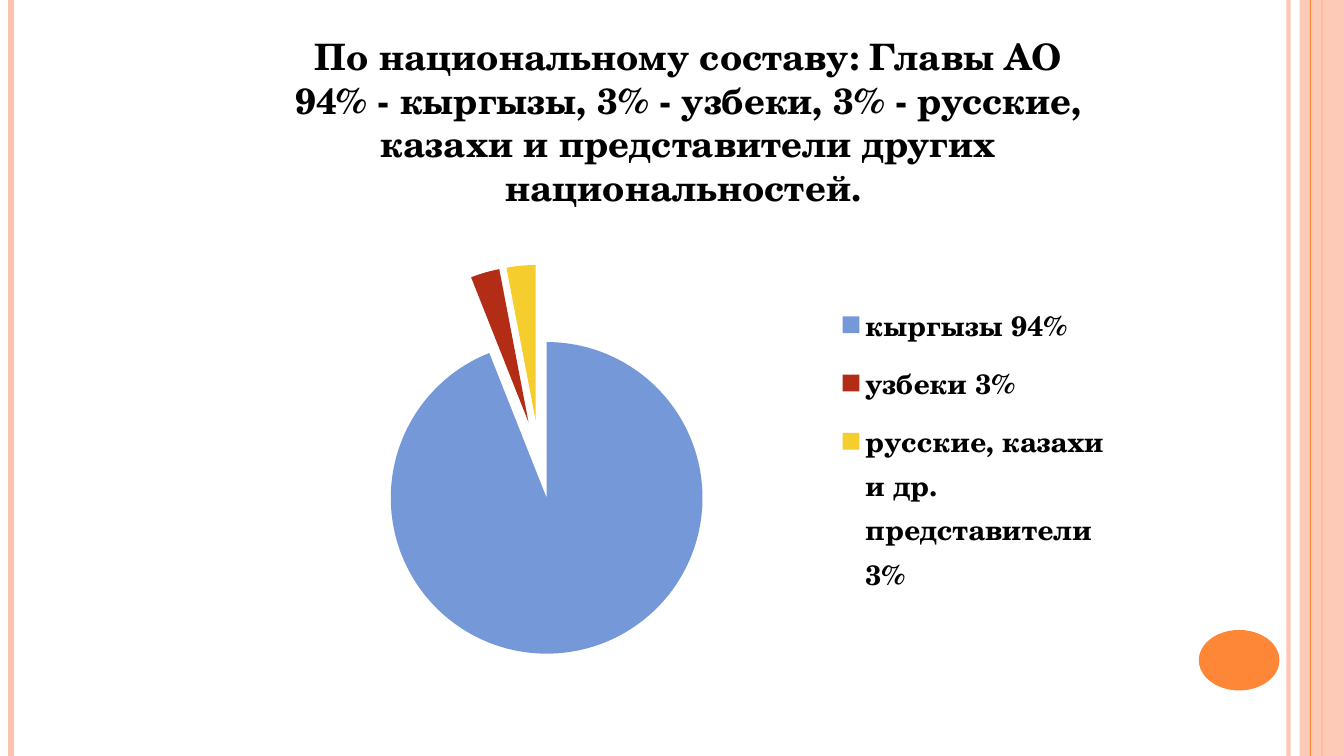
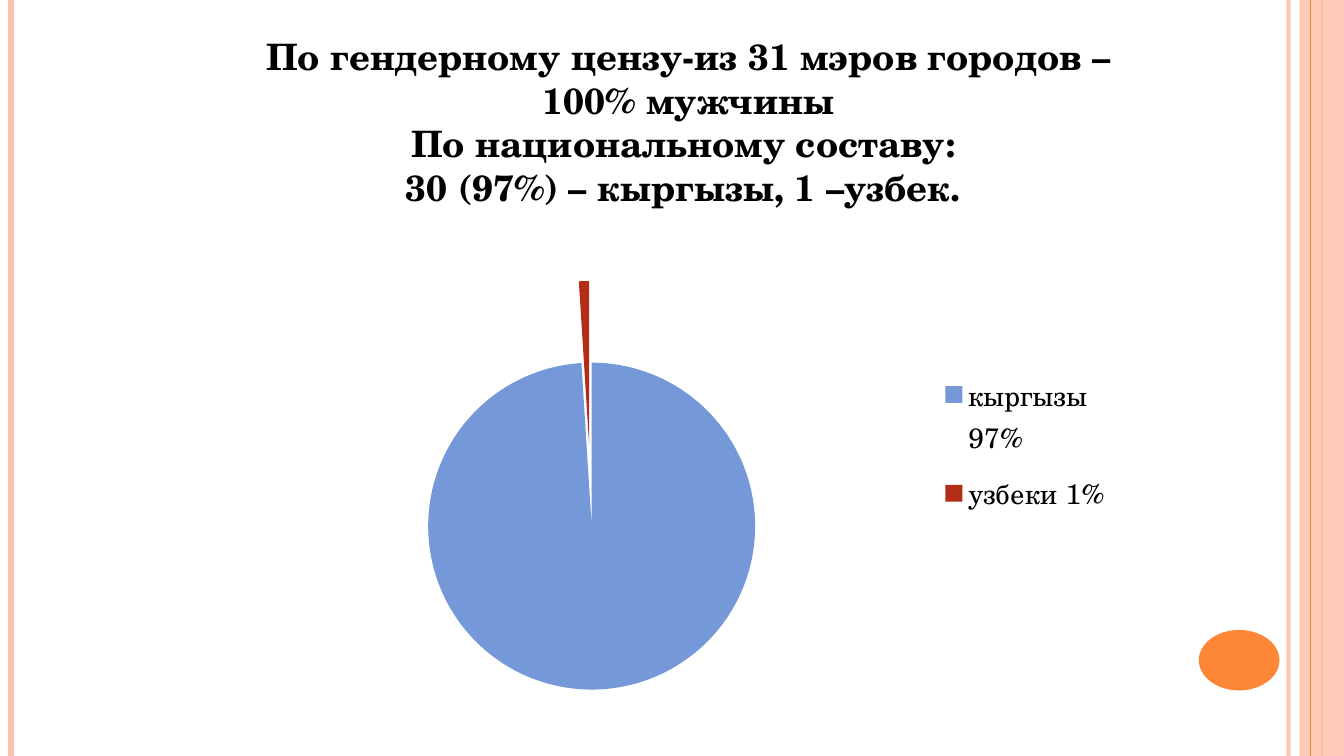
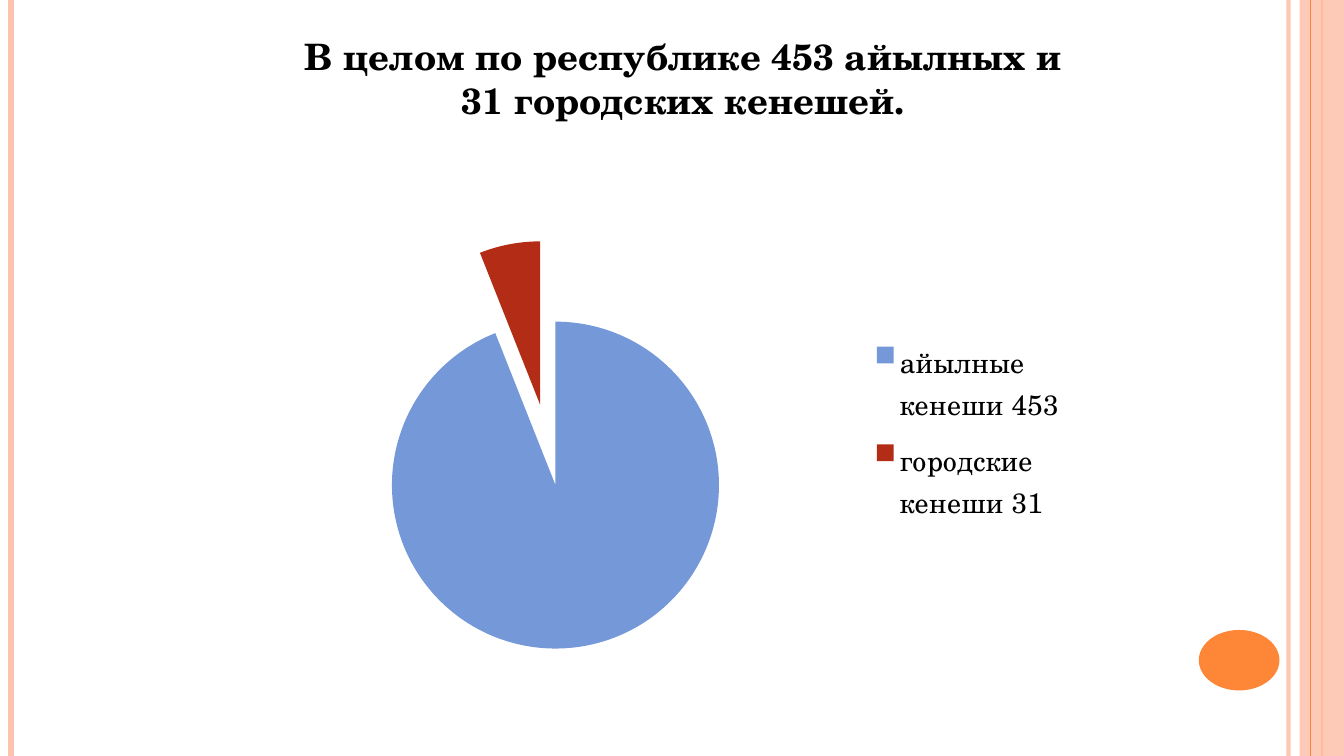
from lxml import etree
from pptx import Presentation
from pptx.chart.data import CategoryChartData
from pptx.dml.color import RGBColor
from pptx.enum import chart as charts, shapes, text
from pptx.oxml import ns
from pptx.util import Inches, Pt

FONT = "TeX Gyre Schola"
BLACK = RGBColor(0x00, 0x00, 0x00)
WHITE = RGBColor(0xFF, 0xFF, 0xFF)
PEACH = RGBColor(0xFE, 0xC3, 0xAE)
ORANGE = RGBColor(0xFE, 0x86, 0x37)
SLICE_COLORS = [
    ORANGE,
    RGBColor(0x75, 0x98, 0xD9),
    RGBColor(0xB3, 0x2C, 0x16),
    RGBColor(0xF5, 0xCD, 0x2D),
]

# Frame parts: x, colour, width in points, opacity in percent
LINES_BELOW_BAND = [(12.78, PEACH, 3, 93), (0.11, PEACH, 4.5, 100), (13.11, ORANGE, 1.5, 100)]
LINES_ABOVE_BAND = [(13, ORANGE, 0.75, 100)]

# Chart boxes are left, top, width, height in inches;
# legend boxes are the same as fractions of the chart
SLIDES = [
    {
        "lines": [
            "По национальному составу: Главы АО",
            "94% - кыргызы, 3% - узбеки, 3% - русские, казахи и представители других национальностей. ",
        ],
        "text_height": 6.22,
        "chart_box": (2.49, 2.49, 8.58, 4.14),
        "legend_box": (0.67, 0.09, 0.33, 0.77),
        "legend_bold": True,
        "values": {"кыргызы 94%": 94, "узбеки 3%": 3, "русские, казахи и др. представители 3%": 3},
    },
    {
        "lines": [
            "По гендерному цензу-из 31 мэров городов – 100% мужчины",
            "По национальному составу: ",
            "30 (97%) – кыргызы, 1 –узбек. ",
        ],
        "text_height": 6.54,
        "chart_box": (2.49, 2.65, 8.58, 4.33),
        "legend_box": (0.79, 0.21, 0.21, 0.39),
        "legend_bold": False,
        "values": {"кыргызы 97%": 99, "узбеки 1%": 1},
    },
    {
        "lines": ["В целом по республике 453 айылных и ", "31 городских кенешей. "],
        "text_height": 6.54,
        "chart_box": (2.18, 2.25, 8.58, 4.33),
        "legend_box": (0.75, 0.23, 0.23, 0.48),
        "legend_bold": False,
        "values": {"айылные кенеши 453": 94, "городские кенеши 31": 6},
    },
]


def add_text(slide, lines, box, size=26, bold=True, color=BLACK, align=text.PP_ALIGN.CENTER):
    frame = slide.shapes.add_textbox(*map(Inches, box)).text_frame
    frame.word_wrap = True
    for index, line in enumerate(lines):
        paragraph = frame.add_paragraph() if index else frame.paragraphs[0]
        paragraph.alignment = align
        run = paragraph.add_run()
        run.text = line
        run.font.name = FONT
        run.font.size = Pt(size)
        run.font.bold = bold
        run.font.color.rgb = color


def set_opacity(shape, percent):
    color = next(shape._element.spPr.iter(ns.qn("a:srgbClr")))
    etree.SubElement(color, ns.qn("a:alpha"), val=str(percent * 1000))


presentation = Presentation()
presentation.slide_width = Inches(13.33)
presentation.slide_height = Inches(7.5)

for content in SLIDES:
    slide = presentation.slides.add_slide(presentation.slide_layouts[6])
    slide.background.fill.solid()
    slide.background.fill.fore_color.rgb = WHITE

    # Side lines, with the band between them
    for x, color, width, opacity in LINES_BELOW_BAND + LINES_ABOVE_BAND:
        if (x, color, width, opacity) in LINES_ABOVE_BAND:
            band = slide.shapes.add_shape(
                shapes.MSO_SHAPE.RECTANGLE, Inches(12.89), 0, Inches(0.44), Inches(7.5))
            band.shadow.inherit = False
            band.fill.solid()
            band.fill.fore_color.rgb = PEACH
            band.line.fill.background()
            set_opacity(band, 87)
        line = slide.shapes.add_connector(
            shapes.MSO_CONNECTOR.STRAIGHT, Inches(x), 0, Inches(x), Inches(7.5))
        line.line.color.rgb = color
        line.line.width = Pt(width)
        if opacity < 100:
            set_opacity(line, opacity)
        etree.SubElement(line._element.spPr, ns.qn("a:effectLst"))

    # Number disc
    disc = slide.shapes.add_shape(
        shapes.MSO_SHAPE.OVAL, Inches(11.89), Inches(6.25), Inches(0.8), Inches(0.6))
    disc.shadow.inherit = False
    disc.fill.solid()
    disc.fill.fore_color.rgb = ORANGE
    disc.line.fill.background()

    add_text(slide, content["lines"], (2.34, 0.29, 8.98, content["text_height"]))

    # Pie chart, with an empty first category
    data = CategoryChartData()
    data.categories = ["", *content["values"]]
    data.add_series("Series 1", [None, *content["values"].values()])
    chart = slide.shapes.add_chart(
        charts.XL_CHART_TYPE.PIE, *map(Inches, content["chart_box"]), data).chart
    chart.has_title = False
    chart.font.name = FONT
    chart.font.size = Pt(10)
    chart.font.color.rgb = BLACK
    plot = chart.plots[0]
    plot.vary_by_categories = True
    series = plot.series[0]
    for index in range(len(content["values"]) + 1):
        point_format = series.points[index].format
        point_format.fill.solid()
        point_format.fill.fore_color.rgb = SLICE_COLORS[index]
        point_format.line.fill.background()
    explosion = etree.Element(ns.qn("c:explosion"), val="25")
    series._element.find(ns.qn("c:dPt")).addprevious(explosion)

    # Legend without the empty category
    chart.has_legend = True
    legend = chart.legend
    legend.position = charts.XL_LEGEND_POSITION.RIGHT
    legend.include_in_layout = False
    legend.font.name = FONT
    legend.font.size = Pt(20)
    legend.font.bold = content["legend_bold"]
    legend.font.color.rgb = BLACK
    entry = etree.Element(ns.qn("c:legendEntry"))
    etree.SubElement(entry, ns.qn("c:idx"), val="0")
    etree.SubElement(entry, ns.qn("c:delete"), val="1")
    legend._element.find(ns.qn("c:legendPos")).addnext(entry)
    for old_layout in legend._element.findall(ns.qn("c:layout")):
        legend._element.remove(old_layout)
    layout = etree.Element(ns.qn("c:layout"))
    manual = etree.SubElement(layout, ns.qn("c:manualLayout"))
    for mode in ("xMode", "yMode"):
        etree.SubElement(manual, ns.qn("c:" + mode), val="edge")
    for side, fraction in zip("xywh", content["legend_box"]):
        etree.SubElement(manual, ns.qn("c:" + side), val=str(fraction))
    entry.addnext(layout)

presentation.save("out.pptx")
